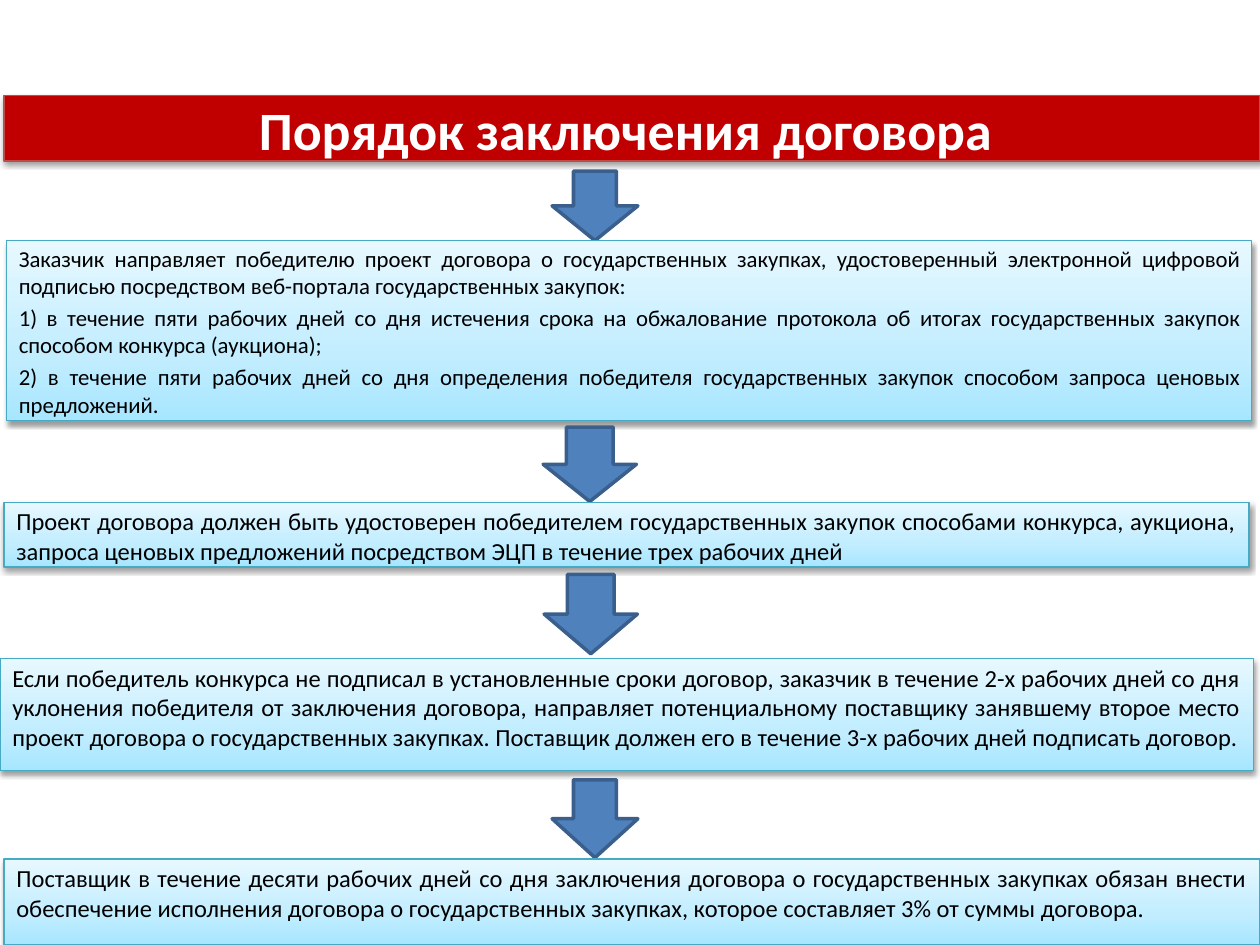
from dataclasses import dataclass

from lxml.etree import SubElement
from pptx import Presentation
from pptx.dml.color import RGBColor
from pptx.enum.shapes import MSO_SHAPE
from pptx.enum.text import MSO_ANCHOR, PP_ALIGN
from pptx.oxml import parse_xml
from pptx.oxml.ns import nsdecls, qn
from pptx.util import Cm, Pt


@dataclass(frozen=True)
class Theme:
    font: str = "Calibri"
    banner: str = "C00000"
    banner_line: str = "BF4C48"
    banner_text: str = "FFFFFF"
    arrow: str = "4F81BD"
    arrow_line: str = "3A5F8C"
    step_stops: tuple = ((0, "A7E6FF"), (35, "C1EDFF"), (100, "E7F8FF"))
    step_line: str = "46AAC5"
    step_text: str = "000000"
    title_size: float = 30.8
    list_size: float = 13
    step_size: float = 14
    thin: float = 0.75
    thick: float = 2


THEME = Theme()

# Each step: box (left, top, width, height in cm), text size, paragraphs
STEPS = [
    ((0.13, 4.85, 25.1, 3.63), THEME.list_size, [
        "Заказчик направляет победителю проект договора о государственных закупках, "
        "удостоверенный электронной цифровой подписью посредством веб-портала "
        "государственных закупок:",
        "1) в течение пяти рабочих дней со дня истечения срока на обжалование протокола "
        "об итогах государственных закупок способом конкурса (аукциона);",
        "2) в течение пяти рабочих дней со дня определения победителя государственных "
        "закупок способом запроса ценовых предложений.",
    ]),
    ((0.08, 10.13, 25.1, 1.3), THEME.step_size, [
        "Проект договора должен быть удостоверен победителем государственных закупок "
        "способами конкурса, аукциона, запроса ценовых предложений посредством ЭЦП "
        "в течение трех рабочих дней",
    ]),
    ((0, 13.28, 25.27, 2.26), THEME.step_size, [
        "Если победитель конкурса не подписал в установленные сроки договор, заказчик "
        "в течение 2-х рабочих дней со дня уклонения победителя от заключения договора, "
        "направляет потенциальному поставщику занявшему второе место проект договора "
        "о государственных закупках. Поставщик должен его в течение 3-х рабочих дней "
        "подписать договор.",
    ]),
    ((0.08, 17.32, 25.32, 1.73), THEME.step_size, [
        "Поставщик в течение десяти рабочих дней со дня заключения договора "
        "о государственных закупках обязан внести обеспечение исполнения договора "
        "о государственных закупках, которое составляет 3% от суммы договора.",
    ]),
]

ARROWS = [
    (11.13, 3.45, 1.73, 1.4),
    (10.95, 8.61, 1.88, 1.5),
    (10.97, 11.58, 1.88, 1.6),
    (11.13, 15.72, 1.73, 1.57),
]


def add_outlined(slide, kind, box, line_color, line_width):
    shape = slide.shapes.add_shape(kind, *(Cm(length) for length in box))
    shape.shadow.inherit = False
    shape.line.color.rgb = RGBColor.from_string(line_color)
    shape.line.width = Pt(line_width)
    return shape


def fill_solid(shape, color):
    shape.fill.solid()
    shape.fill.fore_color.rgb = RGBColor.from_string(color)


def fill_gradient(shape, stops):
    """Blend the stops from the bottom edge to the top edge."""
    stop_xml = "".join(
        f'<a:gs pos="{percent * 1000}"><a:srgbClr val="{color}"/></a:gs>'
        for percent, color in stops)
    gradient = parse_xml(
        f'<a:gradFill {nsdecls("a")} rotWithShape="1"><a:gsLst>{stop_xml}</a:gsLst>'
        '<a:lin ang="16200000" scaled="0"/></a:gradFill>')
    shape.element.spPr.find(qn("a:prstGeom")).addnext(gradient)


def drop_shadow(shape):
    effects = shape.element.spPr.find(qn("a:effectLst"))
    shadow = SubElement(effects, qn("a:outerShdw"), blurRad=str(Pt(3.1)),
                        dist=str(Pt(1.6)), dir="5400000", rotWithShape="0")
    black = SubElement(shadow, qn("a:srgbClr"), val="000000")
    SubElement(black, qn("a:alpha"), val="38000")


def write(paragraph, text, size, color, align, bold=False):
    paragraph.alignment = align
    run = paragraph.add_run()
    run.text = text
    run.font.name = THEME.font
    run.font.size = Pt(size)
    run.font.bold = bold
    run.font.color.rgb = RGBColor.from_string(color)


def add_banner(slide, box, title):
    banner = add_outlined(slide, MSO_SHAPE.RECTANGLE, box, THEME.banner_line, THEME.thin)
    fill_solid(banner, THEME.banner)
    drop_shadow(banner)
    frame = banner.text_frame
    frame.word_wrap = True
    frame.vertical_anchor = MSO_ANCHOR.MIDDLE
    write(frame.paragraphs[0], title, THEME.title_size, THEME.banner_text,
          PP_ALIGN.CENTER, bold=True)


def add_arrow(slide, box):
    arrow = add_outlined(slide, MSO_SHAPE.DOWN_ARROW, box, THEME.arrow_line, THEME.thick)
    fill_solid(arrow, THEME.arrow)


def add_step(slide, box, size, texts):
    step = add_outlined(slide, MSO_SHAPE.RECTANGLE, box, THEME.step_line, THEME.thin)
    fill_gradient(step, THEME.step_stops)
    drop_shadow(step)
    frame = step.text_frame
    frame.word_wrap = True
    frame.vertical_anchor = MSO_ANCHOR.TOP
    # Narrow margins keep the last line inside the tightest boxes
    frame.margin_top = Cm(0.08)
    frame.margin_bottom = Cm(0)
    for index, text in enumerate(texts):
        paragraph = frame.add_paragraph() if index else frame.paragraphs[0]
        if index:
            paragraph.space_before = Pt(size * 0.2)
        write(paragraph, text, size, THEME.step_text, PP_ALIGN.JUSTIFY)


def main():
    deck = Presentation()
    deck.slide_width, deck.slide_height = Cm(25.4), Cm(19.05)
    slide = deck.slides.add_slide(deck.slide_layouts[6])

    # Title banner
    add_banner(slide, (0.08, 1.93, 25.32, 1.32), "Порядок заключения договора ")

    # Chain of steps, each led in by an arrow
    for arrow_box, (step_box, size, texts) in zip(ARROWS, STEPS):
        add_arrow(slide, arrow_box)
        add_step(slide, step_box, size, texts)

    deck.save("out.pptx")


if __name__ == "__main__":
    main()
